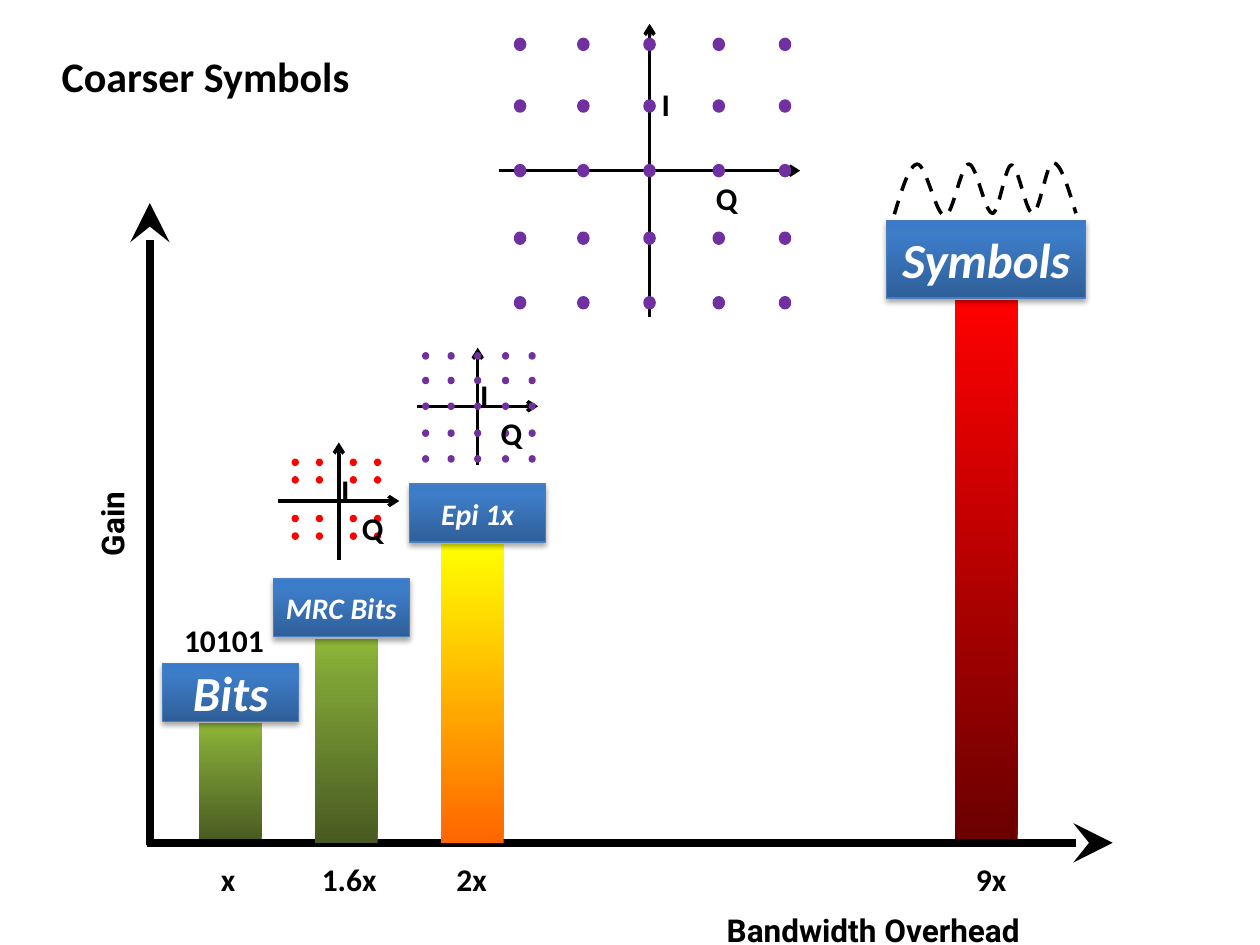
import pptx
import pptx.util
import pptx.dml.color
import pptx.enum.dml
import pptx.enum.shapes
import pptx.enum.text
import pptx.oxml.ns
from lxml import etree

Cm = pptx.util.Cm
qn = pptx.oxml.ns.qn
KIND = pptx.enum.shapes.MSO_SHAPE
ALIGN = pptx.enum.text.PP_ALIGN
ANCHOR = pptx.enum.text.MSO_ANCHOR

HEX = {"ink": "000000", "white": "FFFFFF", "red": "FF0000", "plum": "7030A0", "edge": "4B7EBC"}
# Gradient stops run from the bottom up
FADES = {
    "green": [(0, "485A21"), (80, "7EA135"), (100, "8FB938")],
    "fire": [(0, "FF6600"), (100, "FFFF00")],
    "red": [(0, "6A0000"), (100, "FF0000")],
    "blue": [(0, "2F5F99"), (80, "3D7CC7"), (100, "3A7CCB")],
}


def rgb(name):
    return pptx.dml.color.RGBColor.from_string(HEX[name])


def add(node, tag, **attrs):
    return etree.SubElement(node, qn(tag), attrs)


def write(frame, text, size, color="ink", font="Calibri", align=ALIGN.LEFT, slant=False):
    frame.word_wrap = False
    para = frame.paragraphs[0]
    para.alignment = align
    run = para.add_run()
    run.text = text
    run.font.name = font
    run.font.size = pptx.util.Pt(size)
    run.font.bold = True
    run.font.italic = slant
    run.font.color.rgb = rgb(color)


def note(shapes, box, text, font="Calibri", align=ALIGN.CENTER, pad=True):
    item = shapes.add_textbox(*map(Cm, box))
    frame = item.text_frame
    if not pad:
        frame.margin_left = frame.margin_right = 0
        frame.margin_top = frame.margin_bottom = 0
    write(frame, text, 18, font=font, align=align)
    return item


def arrow(shapes, start, end, width, head, size):
    line = shapes.add_connector(
        pptx.enum.shapes.MSO_CONNECTOR.STRAIGHT, *map(Cm, start + end))
    line.line.color.rgb = rgb("ink")
    line.line.width = pptx.util.Pt(width)
    props = line._element.spPr
    add(props.find(qn("a:ln")), "a:tailEnd", type=head, w=size, len=size)
    add(props, "a:effectLst")


def block(shapes, box, fade):
    item = shapes.add_shape(KIND.RECTANGLE, *map(Cm, box))
    item.shadow.inherit = False
    item.line.fill.background()
    item.fill.gradient()
    item.fill.gradient_angle = 90
    stops = item._element.spPr.find(".//" + qn("a:gsLst"))
    for old in list(stops):
        stops.remove(old)
    for pos, color in FADES[fade]:
        add(add(stops, "a:gs", pos=str(pos * 1000)), "a:srgbClr", val=color)
    return item


def badge(shapes, box, text, size):
    item = block(shapes, box, "blue")
    item.line.color.rgb = rgb("edge")
    item.line.width = pptx.util.Pt(0.75)
    glow = add(item._element.spPr.find(qn("a:effectLst")), "a:outerShdw",
               blurRad="40000", dist="23000", dir="5400000", rotWithShape="0")
    add(add(glow, "a:srgbClr", val=HEX["ink"]), "a:alpha", val="35000")
    item.text_frame.vertical_anchor = ANCHOR.MIDDLE
    write(item.text_frame, text, size, "white", align=ALIGN.CENTER, slant=True)


def grid(slide, box, cols, rows, color, tags=((0.52, 0.24), (0.69, 0.57))):
    """Symbol grid: crossed axes, dots and the I and Q tags, as shares of the box."""
    left, top, width, height = box
    shapes = slide.shapes.add_group_shape().shapes
    midx, midy = left + width / 2, top + height / 2
    arrow(shapes, (left, midy), (left + width, midy), 2, "arrow", "med")
    arrow(shapes, (midx, top + height), (midx, top), 2, "arrow", "med")
    wide, high = 0.03 * width, 0.034 * height
    for row in rows:
        for col in cols:
            dot = shapes.add_shape(
                KIND.OVAL, Cm(left + col * width - wide / 2),
                Cm(top + row * height - high / 2), Cm(wide), Cm(high))
            dot.shadow.inherit = False
            dot.fill.solid()
            dot.fill.fore_color.rgb = rgb(color)
            dot.line.color.rgb = rgb(color)
            dot.line.width = pptx.util.Pt(2)
    for text, (col, row) in zip("IQ", tags):
        note(shapes, (left + col * width, top + row * height, 0.5, 0.77),
             text, align=ALIGN.LEFT, pad=False)


def wave(slide, box):
    """Dashed curve: level at each inner knot, sloped at both ends."""
    left, top = box
    knots = [(0, 1.04), (0.46, 0.03), (1.02, 1.07), (1.5, 0.03), (1.98, 1.02),
             (2.36, 0.05), (2.79, 1.02), (3.2, 0), (3.66, 1.02)]
    pts = []
    last = len(knots) - 2
    for i, ((ax, ay), (bx, by)) in enumerate(zip(knots, knots[1:])):
        mid, step = (ay + by) / 2, (bx - ax) / 3
        pts += [(ax + step, mid if i == 0 else ay),
                (bx - step, mid if i == last else by), (bx, by)]
    spots = [(Cm(left + x), Cm(top + y)) for x, y in knots[:1] + pts]
    form = slide.shapes.build_freeform(*spots[0])
    form.add_line_segments(spots[1:], close=False)
    item = form.convert_to_shape()
    item.shadow.inherit = False
    item.fill.background()
    item.line.color.rgb = rgb("ink")
    item.line.width = pptx.util.Pt(2)
    item.line.dash_style = pptx.enum.dml.MSO_LINE.DASH
    # Turn every three line points into one cubic curve
    track = item._element.spPr.find(".//" + qn("a:path"))
    legs = track.findall(qn("a:lnTo"))
    for i in range(0, len(legs), 3):
        curve = add(track, "a:cubicBezTo")
        for leg in legs[i:i + 3]:
            curve.append(leg[0])
            track.remove(leg)


def chart(slide, box):
    """Gain against bandwidth: axes, bars, badges and ticks."""
    left, top, width, height = box
    base = top + height
    shapes = slide.shapes
    # Bar middle, height, fade; badge middle, width, height, text, size; tick middle, text
    outer = [(1.67, 2.41, "green", 1.68, 2.74, 1.17, "Bits", 28, 1.63, "x"),
             (16.91, 10.94, "red", 16.91, 4.01, 1.57, "Symbols", 28, 17.01, "9x")]
    inner = [(4.01, 4.11, "green", 3.91, 2.74, 1.17, "MRC Bits", 17, 4.07, "1.6x"),
             (6.55, 6.02, "fire", 6.66, 2.74, 1.17, "Epi 1x", 17, 6.54, "2x")]

    def bars(group):
        for mid, tall, fade, *rest in group:
            block(shapes, (left + mid - 0.635, base - tall, 1.27, tall), fade)

    # The inner bars stand in front of the axes
    bars(outer)
    arrow(shapes, (left, base), (left + width, base), 4.5, "stealth", "lg")
    arrow(shapes, (left + 0.05, base + 0.05), (left + 0.05, top), 4.5, "stealth", "lg")
    bars(inner)
    for _, tall, _, mid, wide, high, text, size, spot, tick in outer + inner:
        badge(shapes, (left + mid - wide / 2, base - tall - high - 0.04, wide, high), text, size)
        note(shapes, (left + spot - 1.2, base + 0.22, 2.4, 1.02), tick)
    # Signals above the first and last badge
    note(shapes, (left + 0.23, top + 8.31, 2.63, 1.02), "10101")
    wave(slide, (left + 15.06, top - 0.81))
    # Axis names
    note(shapes, (left - 1.9, top + 5.96, 2.38, 1.02), "Gain", "Roboto").rotation = 270
    note(shapes, (left + 11.43, base + 1.25, 6.86, 1.02), "Bandwidth Overhead", "Roboto",
         ALIGN.LEFT)


def head(slide, box):
    title = slide.shapes.title
    title.left, title.top, title.width, title.height = map(Cm, box)
    title.text_frame.vertical_anchor = ANCHOR.MIDDLE
    write(title.text_frame, "Coarser Symbols", 24)


def main():
    deck = pptx.Presentation()
    deck.slide_width, deck.slide_height = Cm(25.4), Cm(19.05)
    slide = deck.slides.add_slide(deck.slide_layouts[5])
    head(slide, (0.99, 0.89, 6.38, 1.27))
    chart(slide, (2.97, 4.09, 19.46, 12.9))
    five = (0.07, 0.28, 0.5, 0.73, 0.95)
    grid(slide, (5.61, 8.92, 2.44, 2.36), (0.14, 0.34, 0.62, 0.82),
         (0.17, 0.32, 0.65, 0.8), "red")
    grid(slide, (8.41, 7.01, 2.44, 2.36), five, five, "plum")
    grid(slide, (10.06, 0.48, 6.07, 5.92), five, five, "plum", ((0.54, 0.21), (0.72, 0.53)))
    deck.save("out.pptx")


if __name__ == "__main__":
    main()
